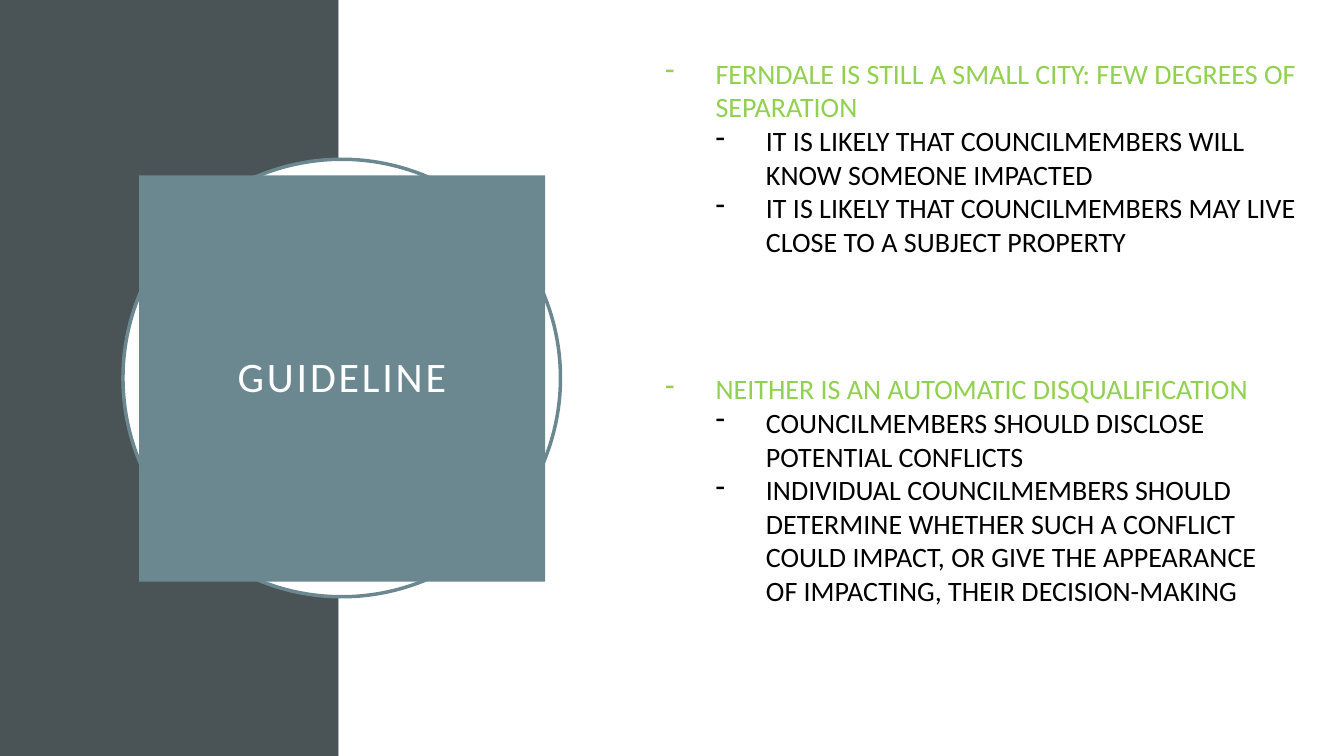
import pptx
import pptx.util
import pptx.dml.color
import pptx.enum.shapes
import pptx.enum.text
import pptx.oxml.ns
import lxml.etree

RGBColor = pptx.dml.color.RGBColor
SLATE = RGBColor(0x4A, 0x53, 0x56)
TEAL = RGBColor(0x6B, 0x88, 0x91)
GREEN = RGBColor(0x92, 0xD0, 0x50)
WHITE = RGBColor(0xFF, 0xFF, 0xFF)
BLACK = RGBColor(0, 0, 0)
RECT = pptx.enum.shapes.MSO_SHAPE.RECTANGLE
OVAL = pptx.enum.shapes.MSO_SHAPE.OVAL

LISTS = [
    (48.53, 47.4, "NEITHER IS AN AUTOMATIC DISQUALIFICATION", [
        "COUNCILMEMBERS SHOULD DISCLOSE POTENTIAL CONFLICTS",
        "INDIVIDUAL COUNCILMEMBERS SHOULD DETERMINE WHETHER SUCH A CONFLICT "
        "COULD IMPACT, OR GIVE THE APPEARANCE OF IMPACTING, THEIR DECISION-MAKING",
    ]),
    (6.8, 49.8, "FERNDALE IS STILL A SMALL CITY: FEW DEGREES OF SEPARATION", [
        "IT IS LIKELY THAT COUNCILMEMBERS WILL KNOW SOMEONE IMPACTED",
        "IT IS LIKELY THAT COUNCILMEMBERS MAY LIVE CLOSE TO A SUBJECT PROPERTY",
    ]),
]


class Deck:
    font = "Calibri"

    def __init__(self):
        self.file = pptx.Presentation()
        self.file.slide_width = pptx.util.Inches(13.33)
        self.file.slide_height = pptx.util.Inches(7.5)
        self.slide = self.file.slides.add_slide(self.file.slide_layouts[6])

    def place(self, left, top, width, height):
        wide, high = self.file.slide_width, self.file.slide_height
        return [round(part * full / 100) for part, full in
                zip((left, top, width, height), (wide, high, wide, high))]

    def shape(self, kind, box, fill, line=None):
        shape = self.slide.shapes.add_shape(kind, *self.place(*box))
        shape.shadow.inherit = False
        shape.fill.solid()
        shape.fill.fore_color.rgb = fill
        if line is None:
            shape.line.fill.background()
        else:
            shape.line.color.rgb = line
            shape.line.width = pptx.util.Pt(2.5)
        return shape

    def style(self, para, size, color):
        for run in para.runs:
            run.font.name = self.font
            run.font.size = pptx.util.Pt(size)
            run.font.color.rgb = color

    def title(self, box, text, fill):
        frame = self.shape(RECT, box, fill).text_frame
        frame.text = text
        frame.word_wrap = True
        frame.vertical_anchor = pptx.enum.text.MSO_ANCHOR.MIDDLE
        para = frame.paragraphs[0]
        para.alignment = pptx.enum.text.PP_ALIGN.CENTER
        para.line_spacing = 0.9
        self.style(para, 30, WHITE)
        para.runs[0].font._element.set("spc", "200")

    def bullets(self, box, head, points):
        frame = self.slide.shapes.add_textbox(*self.place(*box)).text_frame
        frame.word_wrap = True
        frame.text = "\n".join([head, *points])
        for index, para in enumerate(frame.paragraphs):
            level = min(index, 1)
            para.level = level
            self.style(para, 20, BLACK if level else GREEN)
            props = para._p.get_or_add_pPr()
            props.set("marL", str(pptx.util.Inches(0.5 * (level + 1))))
            props.set("indent", str(-pptx.util.Inches(0.5)))
            mark = lxml.etree.SubElement(props, pptx.oxml.ns.qn("a:buChar"))
            mark.set("char", "-")


def main():
    deck = Deck()
    split = 25.2
    deck.shape(RECT, (0, 0, split, 100), SLATE)
    deck.shape(RECT, (split, 0, 100 - split, 100), WHITE)
    deck.shape(OVAL, (9.15, 21.07, 32.55, 57.87), WHITE, TEAL)
    deck.title((10.35, 23.2, 30.22, 53.73), "GUIDELINE", TEAL)
    for top, width, head, points in LISTS:
        deck.bullets((48.75, top, width, 41.73), head, points)
    deck.file.save("out.pptx")


if __name__ == "__main__":
    main()
